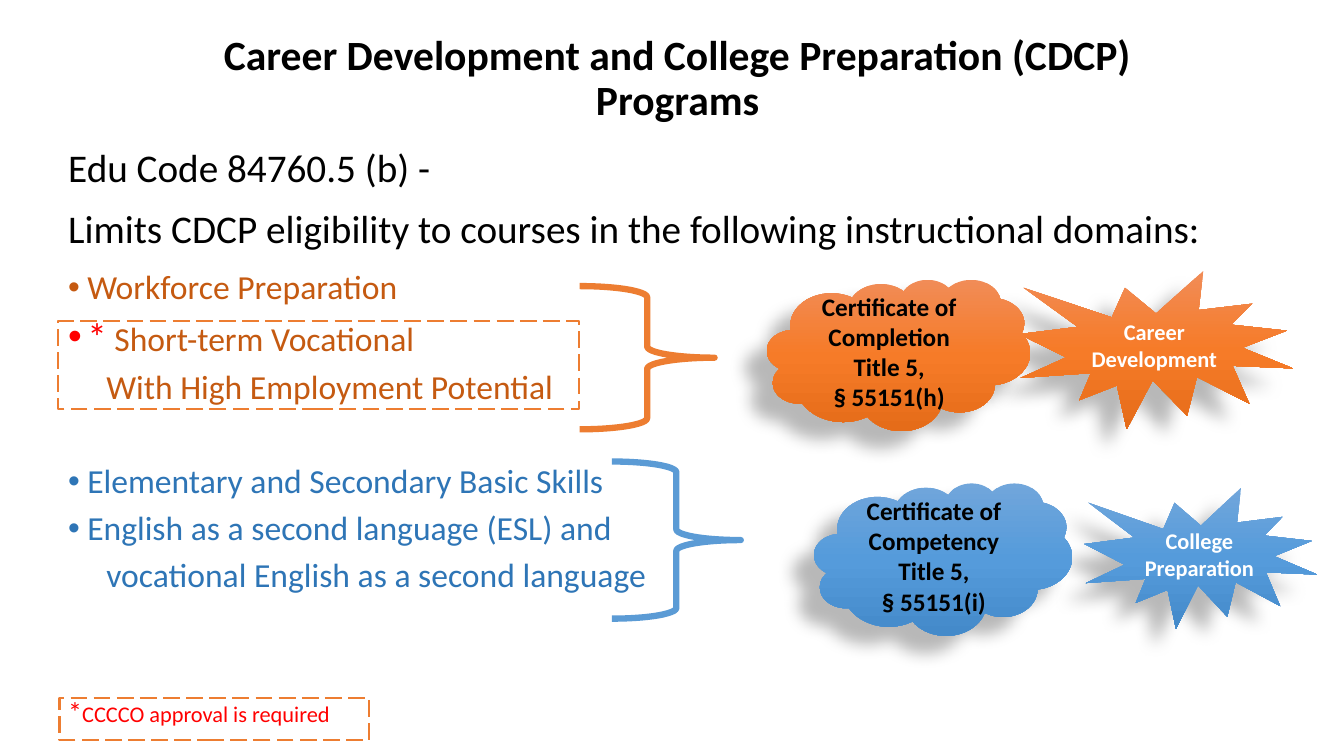
from dataclasses import dataclass

from lxml import etree
from pptx import Presentation
from pptx.dml.color import RGBColor
from pptx.enum.dml import MSO_LINE
from pptx.enum.shapes import MSO_SHAPE
from pptx.enum.text import MSO_ANCHOR, MSO_AUTO_SIZE, PP_ALIGN
from pptx.oxml.ns import qn
from pptx.util import Cm, Pt

CLOUD, BURST = MSO_SHAPE.CLOUD, MSO_SHAPE.EXPLOSION1
BRACE, RECTANGLE = MSO_SHAPE.RIGHT_BRACE, MSO_SHAPE.RECTANGLE
LONG_DASH = MSO_LINE.LONG_DASH
CENTER, LEFT = PP_ALIGN.CENTER, PP_ALIGN.LEFT
MIDDLE, TOP = MSO_ANCHOR.MIDDLE, MSO_ANCHOR.TOP

FONT = "Calibri"
BLACK = RGBColor(0x00, 0x00, 0x00)
WHITE = RGBColor(0xFF, 0xFF, 0xFF)
RED = RGBColor(0xFF, 0x00, 0x00)
ORANGE = RGBColor(0xED, 0x7D, 0x31)
BLUE = RGBColor(0x5B, 0x9B, 0xD5)
DARK_ORANGE = RGBColor(0xC5, 0x5A, 0x11)
DARK_BLUE = RGBColor(0x2E, 0x75, 0xB6)
ORANGE_SHADES = (RGBColor(0xF1, 0x8C, 0x57), RGBColor(0xF6, 0x7B, 0x28), RGBColor(0xE5, 0x6C, 0x19))
BLUE_SHADES = (RGBColor(0x71, 0xA6, 0xDB), RGBColor(0x55, 0x9B, 0xDB), RGBColor(0x44, 0x8A, 0xCA))


@dataclass
class Span:
    text: str
    size: float
    color: RGBColor


@dataclass
class Line:
    spans: list[Span]
    before: float = 7.5
    after: float = 0
    indent: float = 0
    bullet: bool = False


@dataclass
class Badge:
    kind: int
    place: tuple[float, float, float, float]
    shades: tuple[RGBColor, ...]
    lines: list[str]
    size: float
    color: RGBColor


@dataclass
class Outline:
    kind: int
    place: tuple[float, float, float, float]
    color: RGBColor
    width: float
    dash: int | None = None


BULLET_INDENT, FOLLOW_INDENT = 0.48, 0.96

BODY = [
    Line([Span("Edu Code 84760.5 (b) -", 28, BLACK)], after=6),
    Line([Span("Limits CDCP eligibility to courses in the following instructional domains:", 28, BLACK)], after=6),
    Line([Span("Workforce Preparation", 24, DARK_ORANGE)], bullet=True),
    Line([Span("*", 28, RED), Span(" Short-term Vocational", 24, DARK_ORANGE)], bullet=True),
    Line([Span("With High Employment Potential", 24, DARK_ORANGE)], indent=FOLLOW_INDENT),
    Line([Span("Elementary and Secondary Basic Skills", 24, DARK_BLUE)], before=41.4, bullet=True),
    Line([Span("English as a second language (ESL) and", 24, DARK_BLUE)], bullet=True),
    Line([Span("vocational English as a second language", 24, DARK_BLUE)], indent=FOLLOW_INDENT),
    Line([Span("*", 20, RED), Span("CCCCO approval is required", 16, RED)], before=74.1),
]

BADGES = [
    Badge(BURST, (27.33, 12.29, 5.87, 3.56), BLUE_SHADES, ["College Preparation"], 16, WHITE),
    Badge(BURST, (25.68, 6.83, 6.91, 3.99), ORANGE_SHADES, ["Career Development"], 16, WHITE),
    Badge(CLOUD, (19.33, 7.04, 6.63, 3.81), ORANGE_SHADES,
          ["Certificate of Completion", "Title 5,", "§ 55151(h)"], 18, BLACK),
    Badge(CLOUD, (20.52, 12.17, 6.5, 3.84), BLUE_SHADES,
          ["Certificate of Competency", "Title 5,", "§ 55151(i)"], 18, BLACK),
]

OUTLINES = [
    Outline(BRACE, (14.61, 7.21, 3.4, 3.61), ORANGE, 4.5),
    Outline(BRACE, (15.42, 11.63, 3.25, 3.96), BLUE, 4.5),
    Outline(RECTANGLE, (1.47, 8.1, 13.13, 2.21), ORANGE, 1.5, LONG_DASH),
    Outline(RECTANGLE, (1.5, 17.58, 7.8, 1.07), ORANGE, 1.5, LONG_DASH),
]


def lengths(place: tuple[float, float, float, float]) -> list[Cm]:
    return [Cm(value) for value in place]


def set_font(font, size: float, color: RGBColor, bold: bool = False) -> None:
    font.name, font.size, font.bold = FONT, Pt(size), bold
    font.color.rgb = color


def add_color(parent, color: RGBColor):
    return etree.SubElement(parent, qn("a:srgbClr"), val=str(color))


def set_gradient(shape, shades: tuple[RGBColor, ...]) -> None:
    shape.fill.background()
    gradient = etree.Element(qn("a:gradFill"), rotWithShape="1")
    stops = etree.SubElement(gradient, qn("a:gsLst"))
    for index, shade in enumerate(shades):
        position = index * 100000 // (len(shades) - 1)
        add_color(etree.SubElement(stops, qn("a:gs"), pos=str(position)), shade)
    etree.SubElement(gradient, qn("a:lin"), ang="5400000", scaled="0")
    properties = shape._element.spPr
    properties.replace(properties.find(qn("a:noFill")), gradient)


def set_shadow(shape) -> None:
    shape.shadow.inherit = False
    effects = shape._element.spPr.find(qn("a:effectLst"))
    shadow = etree.SubElement(effects, qn("a:outerShdw"), blurRad=str(Pt(11.8)), dist=str(Pt(19.7)),
                              dir=str(141 * 60000), algn="ctr", rotWithShape="0")
    etree.SubElement(add_color(shadow, BLACK), qn("a:alpha"), val="28000")


def add_line(frame, line: Line, first: bool) -> None:
    para = frame.paragraphs[0] if first else frame.add_paragraph()
    para.alignment, para.line_spacing = LEFT, 0.9
    para.space_before, para.space_after = Pt(line.before), Pt(line.after)
    properties = para._p.get_or_add_pPr()
    if line.bullet:
        properties.set("marL", str(Cm(BULLET_INDENT)))
        properties.set("indent", str(-Cm(BULLET_INDENT)))
        etree.SubElement(properties, qn("a:buFont"), typeface="Arial")
        etree.SubElement(properties, qn("a:buChar"), char="•")
    elif line.indent:
        properties.set("marL", str(Cm(line.indent)))
    for span in line.spans:
        run = para.add_run()
        run.text = span.text
        set_font(run.font, span.size, span.color)


def add_badge(page, badge: Badge) -> None:
    shape = page.shapes.add_shape(badge.kind, *lengths(badge.place))
    set_gradient(shape, badge.shades)
    shape.line.fill.background()
    set_shadow(shape)
    frame = shape.text_frame
    frame.word_wrap, frame.vertical_anchor = True, MIDDLE
    frame.text = "\n".join(badge.lines)
    for para in frame.paragraphs:
        para.alignment = CENTER
        set_font(para.font, badge.size, badge.color, bold=True)


def add_outline(page, outline: Outline) -> None:
    shape = page.shapes.add_shape(outline.kind, *lengths(outline.place))
    shape.shadow.inherit = False
    shape.fill.background()
    shape.line.color.rgb, shape.line.width = outline.color, Pt(outline.width)
    if outline.dash is not None:
        shape.line.dash_style = outline.dash


def main() -> None:
    deck = Presentation()
    deck.slide_width, deck.slide_height = Cm(33.87), Cm(19.05)
    page = deck.slides.add_slide(deck.slide_layouts[5])

    # Title
    title = page.shapes.title
    title.left, title.top, title.width, title.height = lengths((3.43, 0.69, 27.3, 2.62))
    frame = title.text_frame
    frame.text = "Career Development and College Preparation (CDCP) Programs"
    frame.vertical_anchor, frame.auto_size = MIDDLE, MSO_AUTO_SIZE.NONE
    heading = frame.paragraphs[0]
    heading.alignment, heading.line_spacing = CENTER, 0.9
    set_font(heading.font, 29.7, BLACK, bold=True)

    # Body text
    box = page.shapes.add_textbox(*lengths((1.47, 3.61, 31.12, 15.04)))
    box.text_frame.word_wrap, box.text_frame.vertical_anchor = True, TOP
    for index, line in enumerate(BODY):
        add_line(box.text_frame, line, first=index == 0)

    # Certificates and programs, then braces and dashed frames
    for badge in BADGES:
        add_badge(page, badge)
    for outline in OUTLINES:
        add_outline(page, outline)

    deck.save("out.pptx")


if __name__ == "__main__":
    main()
